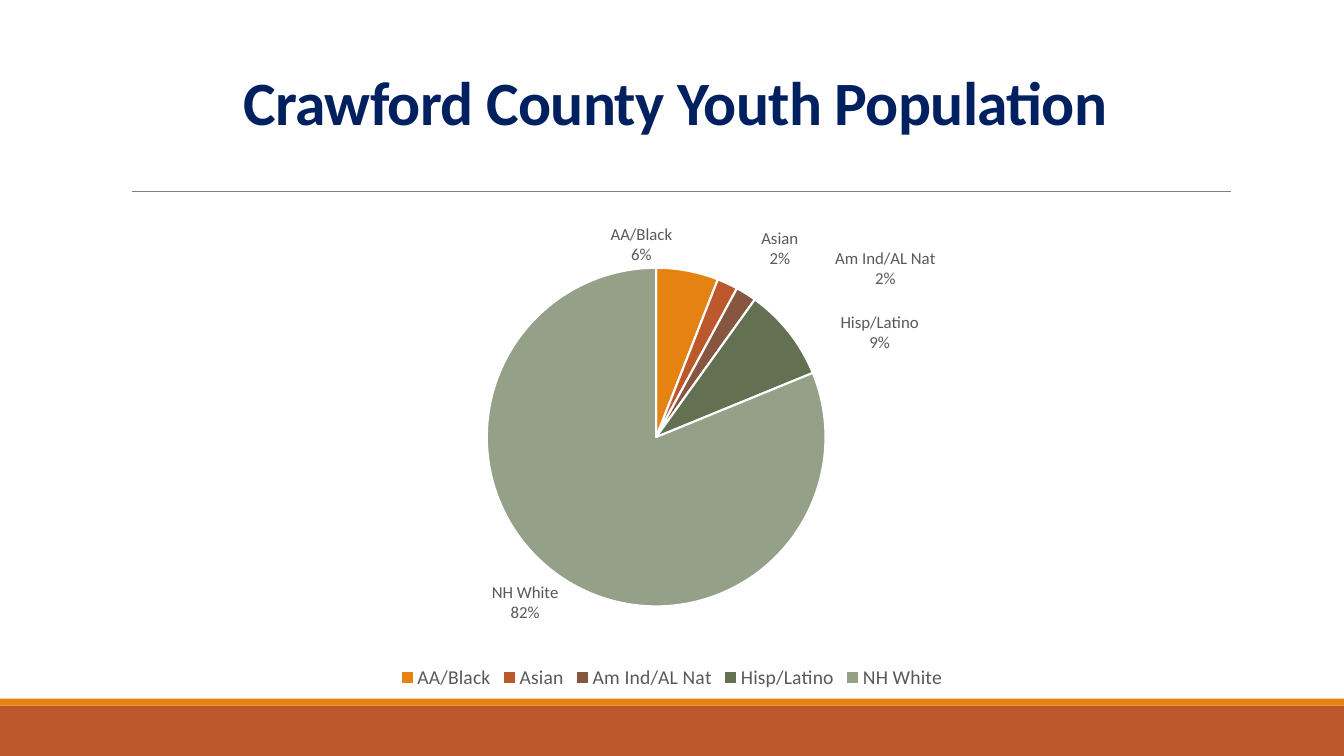
from copy import deepcopy

from lxml import etree
from pptx import Presentation
from pptx import util as u
from pptx.chart import data as chart_data
from pptx.dml import color
from pptx.enum import chart as charts, shapes, text
from pptx.oxml import ns

FONT = "Calibri"
WIDTH, HEIGHT = 960, 540
ORANGE, RUST, NAVY, GREY = "E48312", "BD582C", "002060", "595959"

# Name, percentage, slice colour, label shift as a fraction of the chart
GROUPS = [
    ("AA/Black", 6, ORANGE, (-0.1, 0)),
    ("Asian", 2, RUST, (0.04, -0.02)),
    ("Am Ind/AL Nat", 2, "865640", (0.11, 0)),
    ("Hisp/Latino", 9, "637052", (0.06, 0.05)),
    ("NH White", 82, "94A088", None),
]
PIE_LAYOUT = {"x": 0.26, "y": 0.12, "w": 0.44, "h": 0.7}


def rgb(value):
    return color.RGBColor.from_string(value)


def add_element(parent, tag, value=None):
    element = etree.SubElement(parent, ns.qn(tag))
    if value is not None:
        element.set("val", str(value))
    return element


def manual_layout(values, inner=False):
    layout = etree.Element(ns.qn("c:layout"))
    manual = add_element(layout, "c:manualLayout")
    if inner:
        add_element(manual, "c:layoutTarget", "inner")
        add_element(manual, "c:xMode", "edge")
        add_element(manual, "c:yMode", "edge")
    for key, value in values.items():
        add_element(manual, f"c:{key}", value)
    return layout


class SlideBuilder:
    def __init__(self, page):
        self.page = page

    def set_font(self, font, size, colour, bold=False):
        font.name, font.size, font.bold = FONT, u.Pt(size), bold
        font.color.rgb = rgb(colour)

    def band(self, top, height, colour):
        box = self.page.shapes.add_shape(
            shapes.MSO_SHAPE.RECTANGLE, 0, u.Pt(top), u.Pt(WIDTH), u.Pt(height))
        box.shadow.inherit = False
        box.fill.solid()
        box.fill.fore_color.rgb = rgb(colour)
        box.line.fill.background()

    def rule(self, left, right, y, colour):
        line = self.page.shapes.add_connector(
            shapes.MSO_CONNECTOR.STRAIGHT, u.Pt(left), u.Pt(y), u.Pt(right), u.Pt(y))
        line.line.color.rgb = rgb(colour)
        line.line.width = u.Pt(0.5)
        add_element(line._element.spPr, "a:effectLst")

    def title(self, words, left, top, width, height):
        box = self.page.shapes.title
        box.left, box.top = u.Pt(left), u.Pt(top)
        box.width, box.height = u.Pt(width), u.Pt(height)
        frame = box.text_frame
        frame.vertical_anchor = text.MSO_ANCHOR.BOTTOM
        para = frame.paragraphs[0]
        para.alignment, para.line_spacing = text.PP_ALIGN.CENTER, 0.85
        self.set_font(para.font, 44, NAVY, bold=True)
        span = para.add_run()
        span.text = words
        span.font._element.set("spc", "-50")

    def pie(self, groups, left, top, width, height):
        data = chart_data.CategoryChartData()
        data.categories = [name for name, *_ in groups]
        data.add_series("Series 1", [share for _, share, *_ in groups])
        chart = self.page.shapes.add_chart(
            charts.XL_CHART_TYPE.PIE, u.Pt(left), u.Pt(top),
            u.Pt(width), u.Pt(height), data).chart
        chart.has_title = False
        self.set_font(chart.font, 10, "000000")
        chart.has_legend = True
        chart.legend.position = charts.XL_LEGEND_POSITION.BOTTOM
        chart.legend.include_in_layout = False
        self.set_font(chart.legend.font, 14, GREY)

        # Plot area
        area = chart._chartSpace.chart.plotArea
        for layout in area.findall(ns.qn("c:layout")):
            area.remove(layout)
        area.insert(0, manual_layout(PIE_LAYOUT, inner=True))

        # Slices
        series = chart.plots[0].series[0]
        for index, (_, _, colour, _) in enumerate(groups):
            style = series.points[index].format
            style.fill.solid()
            style.fill.fore_color.rgb = rgb(colour)
            style.line.color.rgb = rgb("FFFFFF")
            style.line.width = u.Pt(1.5)
        self.pie_labels(series.data_labels, [shift for *_, shift in groups])

    def pie_labels(self, labels, shifts):
        # The rounded shares add up to 101, so the values serve as percentages
        labels.show_category_name = labels.show_value = True
        labels.show_percentage = False
        labels.number_format, labels.number_format_is_linked = '0"%"', False
        labels.position = charts.XL_LABEL_POSITION.OUTSIDE_END
        self.set_font(labels.font, 12, GREY)
        root = labels._element
        for leader in root.findall(ns.qn("c:showLeaderLines")):
            root.remove(leader)
        add_element(root, "c:separator").text = "\n"
        shared = list(root)

        # Labels moved away from their usual place
        for index, shift in enumerate(shifts):
            if shift:
                label = etree.Element(ns.qn("c:dLbl"))
                add_element(label, "c:idx", index)
                label.append(manual_layout(dict(zip("xy", shift))))
                label.extend(deepcopy(shared))
                root.insert(index, label)
        add_element(root, "c:showLeaderLines", 0)


def main():
    deck = Presentation()
    deck.slide_width, deck.slide_height = u.Pt(WIDTH), u.Pt(HEIGHT)
    builder = SlideBuilder(deck.slides.add_slide(deck.slide_layouts[5]))

    # Footer bands and title rule
    builder.band(504, 36, RUST)
    builder.band(499, 5, ORANGE)
    builder.rule(94.3, 879, 136.8, "808080")

    # Title and chart
    builder.title("Crawford County Youth Population", 86.4, 22.8, 792, 79.2)
    builder.pie(GROUPS, 200.9, 149.8, 558, 345.6)
    deck.save("out.pptx")


if __name__ == "__main__":
    main()
